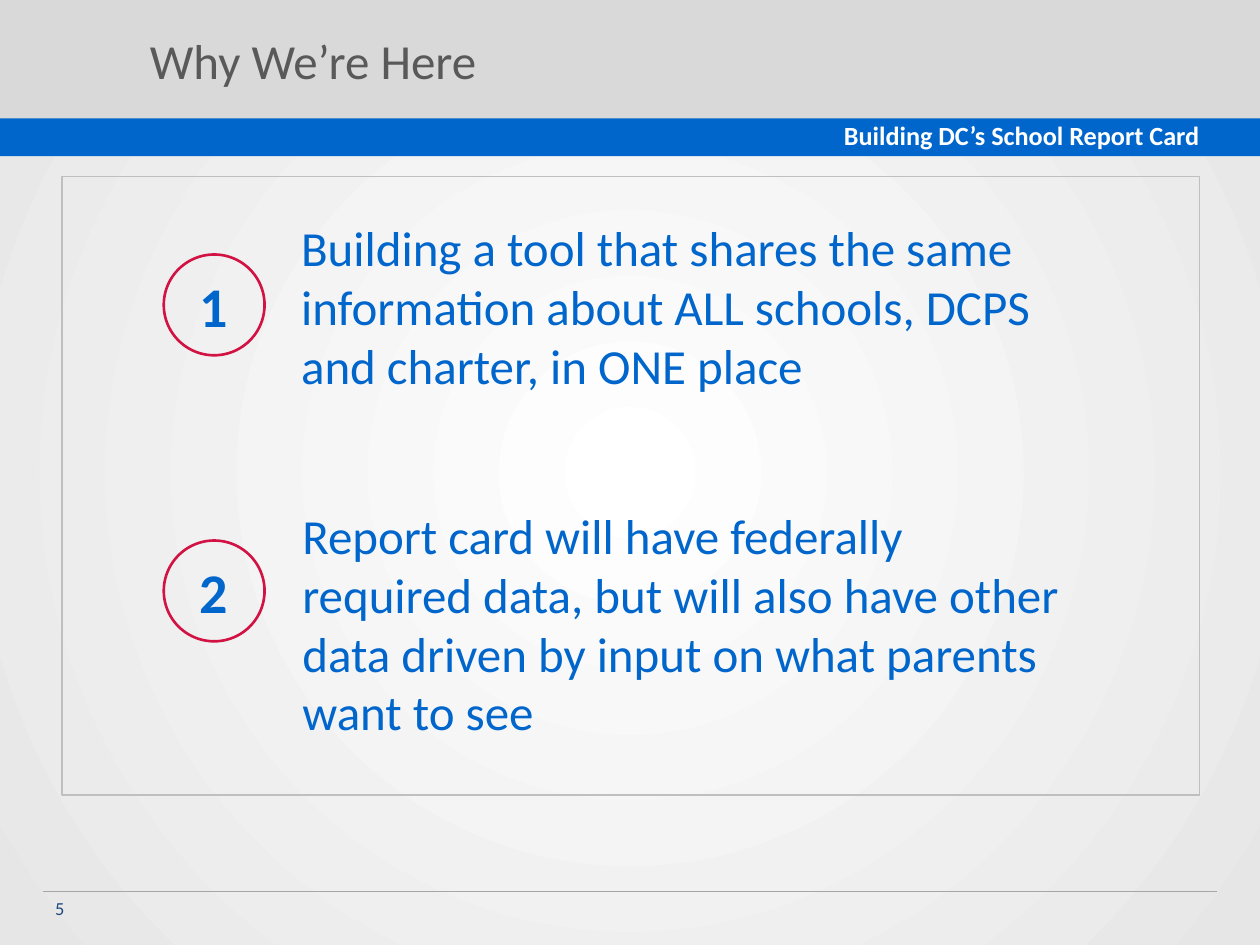
from lxml import etree
from pptx import Presentation
from pptx.dml.color import RGBColor
from pptx.enum import shapes, text
from pptx.oxml import ns
from pptx.util import Inches, Pt

BLUE = RGBColor(0x00, 0x66, 0xCC)
RED = RGBColor(0xD1, 0x12, 0x42)
NAVY = RGBColor(0x1F, 0x49, 0x7D)
WHITE = RGBColor(0xFF, 0xFF, 0xFF)
EDGE = RGBColor(0xE6, 0xE6, 0xE6)
BAND = RGBColor(0xD9, 0xD9, 0xD9)
FRAME = RGBColor(0xBF, 0xBF, 0xBF)
RULE = RGBColor(0xA6, 0xA6, 0xA6)
TITLE = RGBColor(0x59, 0x59, 0x59)


def add_shape(kind, box, fill=None, line=None, width=1):
    sp = s.shapes.add_shape(kind, *map(Inches, box))
    sp.shadow.inherit = False
    if fill is None:
        sp.fill.background()
    else:
        sp.fill.solid()
        sp.fill.fore_color.rgb = fill
    if line is None:
        sp.line.fill.background()
    else:
        sp.line.color.rgb = line
        sp.line.width = Pt(width)
    return sp


def set_text(sp, words, size, color, bold=False, inset=None,
             anchor=text.MSO_ANCHOR.TOP, align=text.PP_ALIGN.LEFT):
    tf = sp.text_frame
    tf.word_wrap = True
    tf.vertical_anchor = anchor
    if inset is not None:
        tf.margin_left = tf.margin_right = Inches(inset)
        tf.margin_top = tf.margin_bottom = Inches(inset)
    p = tf.paragraphs[0]
    p.text = words
    p.alignment = align
    p.font.name = "Calibri"
    p.font.size = Pt(size)
    p.font.bold = bold
    p.font.color.rgb = color
    return p


prs = Presentation()
prs.slide_width, prs.slide_height = Inches(10), Inches(7.5)
s = prs.slides.add_slide(prs.slide_layouts[5])
RECT = shapes.MSO_SHAPE.RECTANGLE
MIDDLE = text.MSO_ANCHOR.MIDDLE

# Background: radial gradient from the centre
fill = s.background.fill
fill.gradient()
for stop, color in zip(fill.gradient_stops, (WHITE, EDGE)):
    stop.color.rgb = color
grad = s._element.find(".//" + ns.qn("a:gradFill"))
grad.remove(grad.find(ns.qn("a:lin")))
radial = etree.SubElement(grad, ns.qn("a:path"), path="circle")
etree.SubElement(radial, ns.qn("a:fillToRect"),
                 l="50000", t="50000", r="50000", b="50000")

# Header band, blue strip and its caption
add_shape(RECT, (0, 0, 10, 1.01), BAND)
add_shape(RECT, (0, 0.94, 10, 0.3), BLUE)
caption = s.shapes.add_textbox(Inches(6.6), Inches(0.9), Inches(3.4), Inches(0.35))
set_text(caption, "Building DC’s School Report Card", 15, WHITE, bold=True)

# Title, brought in front of the band
title = s.shapes.title
title.left, title.top = Inches(1.09), Inches(0.12)
title.width, title.height = Inches(8.65), Inches(0.71)
set_text(title, "Why We’re Here", 28, TITLE, anchor=MIDDLE)
s.shapes._spTree.append(title._element)

# Numbered reasons: circle top, text box, extra space below the text
reasons = [
    (2.02, (2.34, 2.12, 6.43, 0.62), 0,
     "Building a tool that shares the same information about ALL schools, "
     "DCPS and charter, in ONE place"),
    (4.29, (2.35, 4.11, 6.43, 2.12), 0.45,
     "Report card will have federally\vrequired data, but will also have "
     "other data driven by input on what parents want to see"),
]
for number, (top, box, space, words) in enumerate(reasons, 1):
    circle = add_shape(shapes.MSO_SHAPE.OVAL, (1.3, top, 0.8, 0.8), line=RED, width=1.5)
    set_text(circle, str(number), 32, BLUE, bold=True, inset=0.1,
             anchor=MIDDLE, align=text.PP_ALIGN.CENTER)
    reason = s.shapes.add_textbox(*map(Inches, box))
    p = set_text(reason, words, 28, BLUE, inset=0.05, anchor=MIDDLE)
    p.space_before = Pt(2)
    reason.text_frame.margin_bottom = Inches(0.05 + space)

# Footer rule and page number
rule = s.shapes.add_connector(shapes.MSO_CONNECTOR.STRAIGHT, Inches(0.34),
                              Inches(7.07), Inches(9.66), Inches(7.07))
rule.line.color.rgb = RULE
rule.line.width = Pt(0.25)
etree.SubElement(rule._element.spPr, ns.qn("a:effectLst"))
page = s.shapes.add_textbox(Inches(0.34), Inches(7.07), Inches(2.33), Inches(0.4))
set_text(page, "5", 10.5, NAVY)

# Frame around the reasons
add_shape(RECT, (0.49, 1.4, 9.03, 4.91), line=FRAME)

prs.save("out.pptx")
